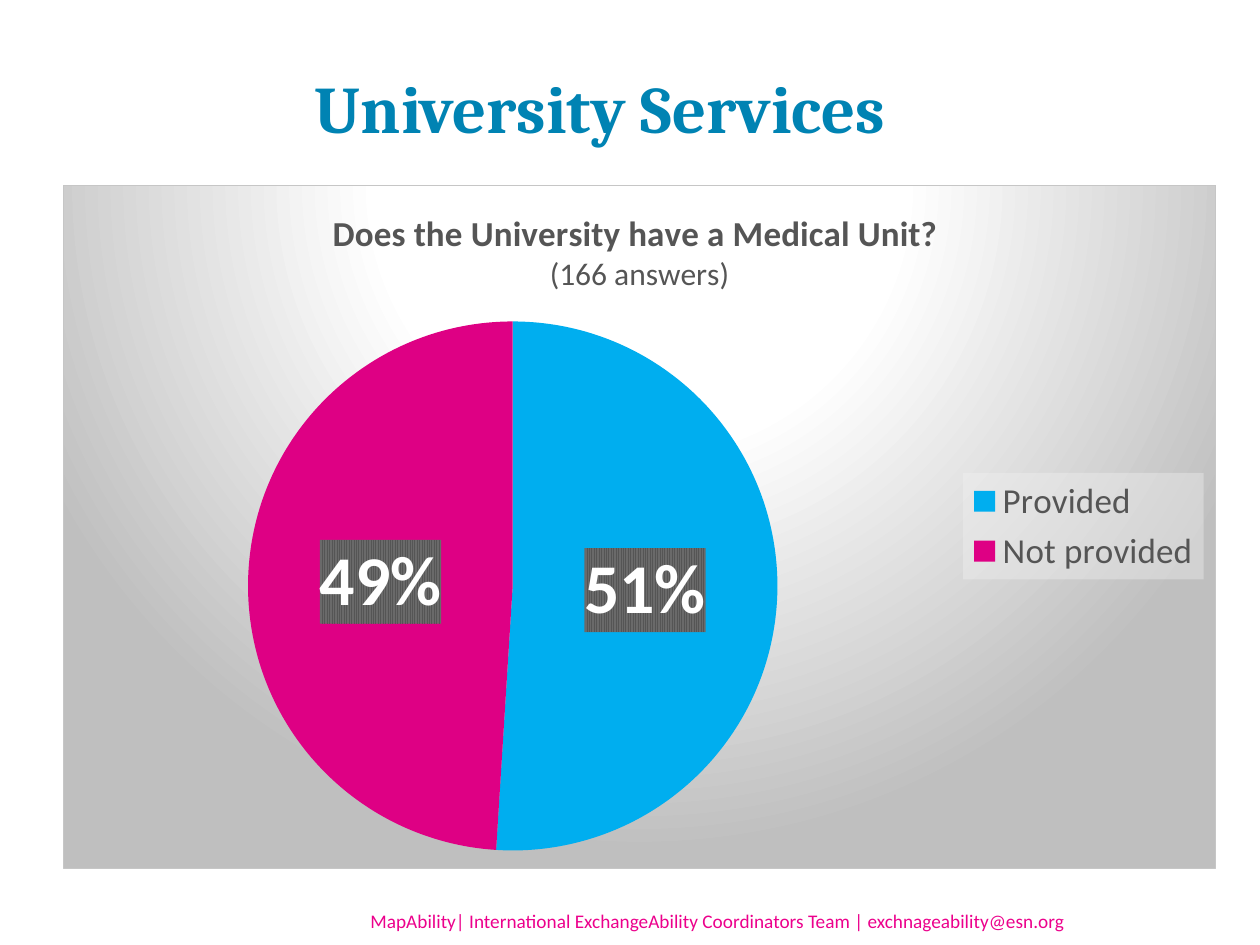
from pptx import Presentation
from pptx.chart.data import CategoryChartData
from pptx.dml.color import RGBColor
from pptx.enum.chart import XL_CHART_TYPE, XL_LABEL_POSITION, XL_LEGEND_POSITION
from pptx.enum.text import MSO_ANCHOR, PP_ALIGN
from pptx.oxml import parse_xml
from pptx.oxml.ns import nsdecls, qn
from pptx.util import Emu, Pt

SCALE = 914400 // 126  # EMU in one px
BOX = (63, 185, 1153, 684)  # chart frame
PIE = (248, 321, 530, 530)
KEY = (963, 473, 241, 107)  # legend


def px(*nums):
    return [Emu(n * SCALE) for n in nums]


def paint(item, hue):
    item.rgb = RGBColor.from_string(hue)


def style(font, size, hue, face="Calibri", bold=False):
    font.size, font.name, font.bold = Pt(size), face, bold
    paint(font.color, hue)


def write(para, text, align=PP_ALIGN.LEFT, **form):
    para.alignment = align
    run = para.add_run()
    run.text = text
    style(run.font, **form)


def solid(hue, alpha=100):
    return (f'<a:solidFill><a:srgbClr val="{hue}">'
            f'<a:alpha val="{alpha * 1000}"/></a:srgbClr></a:solidFill>')


def back(node, body):
    """Give a chart part a fill; its text format must be set already."""
    xml = f'<c:spPr {nsdecls("c", "a")}>{body}</c:spPr>'
    node.find(qn("c:txPr")).addprevious(parse_xml(xml))


def layout(area, inner=False):
    """Lay out a chart part as shares of the chart frame."""
    shares = ((area[0] - BOX[0]) / BOX[2], (area[1] - BOX[1]) / BOX[3],
              area[2] / BOX[2], area[3] / BOX[3])
    body = '<c:layoutTarget val="inner"/>' if inner else ""
    body += '<c:xMode val="edge"/><c:yMode val="edge"/>'
    for key, share in zip("xywh", shares):
        body += f'<c:{key} val="{share:.3f}"/>'
    return parse_xml(f'<c:layout {nsdecls("c")}><c:manualLayout>{body}'
                     '</c:manualLayout></c:layout>')


def head(slide):
    title = slide.shapes.title
    title.left, title.top, title.width, title.height = px(302, 28, 922, 157)
    title.text_frame.vertical_anchor = MSO_ANCHOR.MIDDLE
    write(title.text_frame.paragraphs[0], "University Services",
          size=38, hue="0083B3", face="Cambria", bold=True)


def foot(slide):
    frame = slide.shapes.add_textbox(*px(358, 911, 856, 20)).text_frame
    frame.word_wrap = True
    frame.vertical_anchor = MSO_ANCHOR.MIDDLE
    write(frame.paragraphs[0],
          "MapAbility| International ExchangeAbility Coordinators Team"
          " | exchnageability@esn.org", size=11, hue="EC008C")


def pie(slide):
    data = CategoryChartData()
    data.categories = ["Provided", "Not provided"]
    data.add_series("Series 1", (51, 49))
    chart = slide.shapes.add_chart(XL_CHART_TYPE.PIE, *px(*BOX), data).chart
    style(chart.font, 10, "1C1C1C")

    # Title in two lines
    frame = chart.chart_title.text_frame
    write(frame.paragraphs[0], "Does the University have a Medical Unit? ",
          PP_ALIGN.CENTER, size=20, hue="555555", bold=True)
    write(frame.add_paragraph(), "(166 answers)",
          PP_ALIGN.CENTER, size=18, hue="555555")
    chart.chart_title.include_text_in_layout = False

    # Slices
    plot = chart.plots[0]
    plot.vary_by_categories = True
    for i, hue in enumerate(("00AEEF", "DE0084")):
        fill = plot.series[0].points[i].format.fill
        fill.solid()
        paint(fill.fore_color, hue)

    # Percent labels on a striped ground
    plot.has_data_labels = True
    labels = plot.data_labels
    labels.show_percentage, labels.show_value = True, False
    labels.number_format, labels.number_format_is_linked = "0%", False
    labels.position = XL_LABEL_POSITION.CENTER
    style(labels.font, 40, "FFFFFF", bold=True)
    node = labels.font._element if hasattr(labels.font, "_element") else None
    node = plot._element.find(qn("c:dLbls"))
    back(node, '<a:pattFill prst="narVert"><a:fgClr><a:srgbClr val="555555"/>'
         '</a:fgClr><a:bgClr><a:srgbClr val="6A6A6A"/></a:bgClr></a:pattFill>')

    # Legend
    chart.has_legend = True
    legend = chart.legend
    legend.position = XL_LEGEND_POSITION.RIGHT
    legend.include_in_layout = False
    style(legend.font, 20, "555555")
    node = legend._element
    back(node, solid("F2F2F2", 39))
    node.find(qn("c:legendPos")).addnext(layout(KEY))

    # Plot place and frame
    area = chart._chartSpace.chart.plotArea
    for old in area.findall(qn("c:layout")):
        area.remove(old)
    area.insert(0, layout(PIE, inner=True))
    stops = "".join(f'<a:gs pos="{pos}000"><a:srgbClr val="{hue}"/></a:gs>'
                    for pos, hue in ((0, "FFFFFF"), (39, "FFFFFF"), (100, "BFBFBF")))
    back(chart._chartSpace,
         f'<a:gradFill><a:gsLst>{stops}</a:gsLst><a:path path="circle">'
         '<a:fillToRect l="50000" t="-80000" r="50000" b="180000"/></a:path>'
         f'</a:gradFill><a:ln w="9525">{solid("C6C6C6")}</a:ln>')


def main():
    deck = Presentation()
    deck.slide_width, deck.slide_height = px(1260, 945)
    slide = deck.slides.add_slide(deck.slide_layouts[5])
    head(slide)
    pie(slide)
    foot(slide)
    deck.save("out.pptx")


if __name__ == "__main__":
    main()
